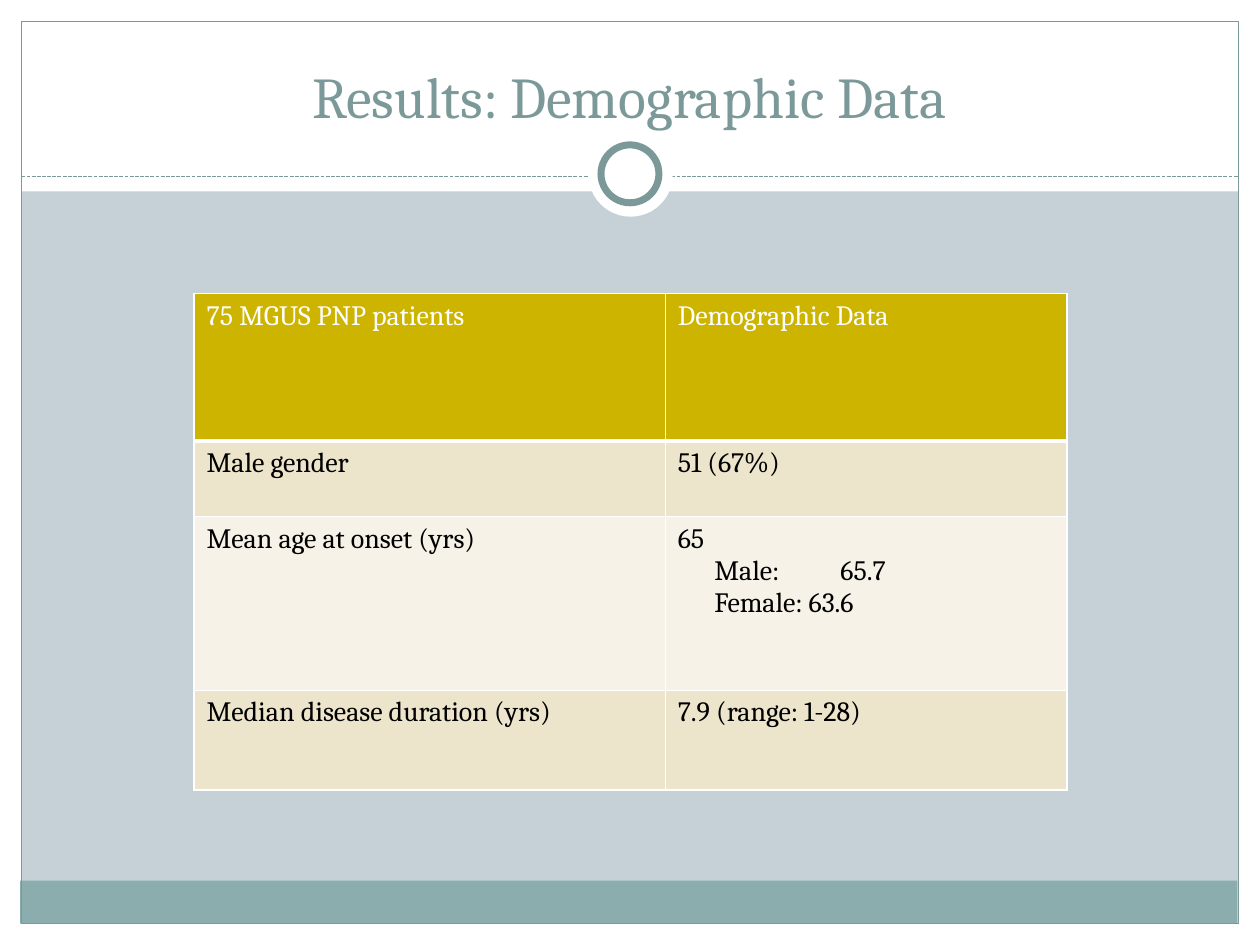
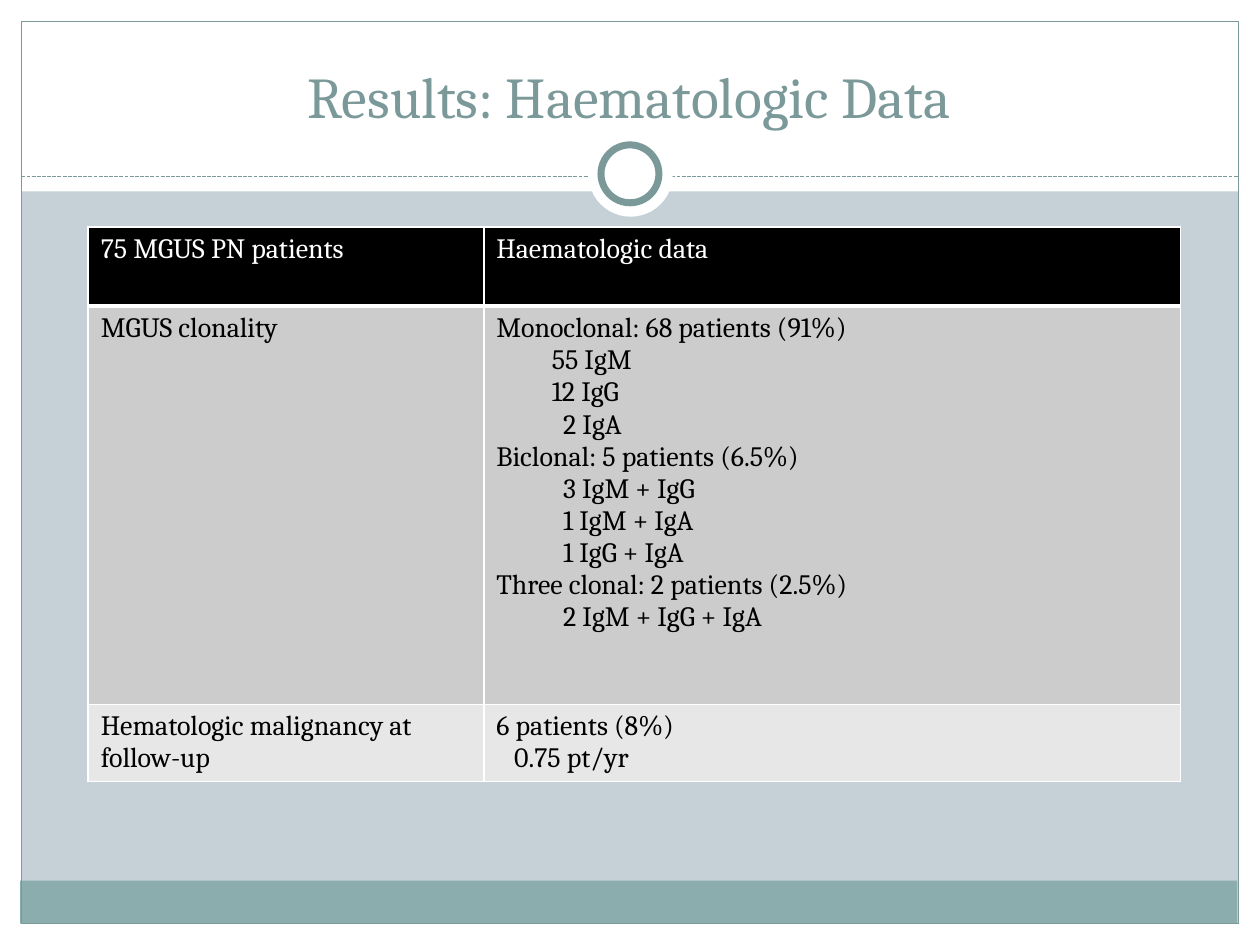
import pptx
import pptx.dml.color
import pptx.enum.dml
import pptx.enum.shapes
import pptx.enum.text
import pptx.oxml
import pptx.oxml.ns
import pptx.util
from pptx.util import Inches

FONT = "Cambria"
COLORS = {
    "background": "C5D1D7", "white": "FFFFFF", "black": "000000",
    "accent": "7C999A", "footer": "8CADAE",
    "gold": "CCB400", "sand": "ECE5CC", "cream": "F6F2E7",
    "gray": "CCCCCC", "light gray": "E7E7E7",
}

# Content: a cell is a list of lines; a line is text or (text, indent in inches)
SLIDES = [
    {
        "title": "Results: Demographic Data",
        "position": (1.54, 2.33),
        "columns": [3.74, 3.19],
        "heights": [1.17, 0.6, 1.38, 0.79],
        "fills": ("gold", "sand", "cream"),
        "rows": [
            (["75 MGUS PNP patients"], ["Demographic Data"]),
            (["Male gender"], ["51 (67%)"]),
            (["Mean age at onset (yrs)"],
             ["65", ("Male:\t65.7", 0.29), ("Female: 63.6", 0.29)]),
            (["Median disease duration (yrs)"], ["7.9 (range: 1-28)"]),
        ],
    },
    {
        "title": "Results: Haematologic Data",
        "position": (0.7, 1.8),
        "columns": [3.14, 5.53],
        "heights": [0.63, 3.16, 0.6],
        "fills": ("black", "gray", "light gray"),
        "rows": [
            (["75 MGUS PN patients"], ["Haematologic data"]),
            (["MGUS clonality"],
             ["Monoclonal: 68 patients (91%)",
              ("55 IgM", 0.44), ("12 IgG", 0.44), ("2 IgA", 0.53),
              "Biclonal: 5 patients (6.5%)",
              ("3 IgM + IgG", 0.53), ("1 IgM + IgA", 0.53), ("1 IgG + IgA", 0.53),
              "Three clonal: 2 patients (2.5%)",
              ("2 IgM + IgG + IgA", 0.53)]),
            (["Hematologic malignancy at follow-up"],
             ["6 patients (8%)", ("0.75 pt/yr", 0.14)]),
        ],
    },
]

# Frame shared by the slides: kind, box, fill, line width
MARGIN = 0.17
FRAME = [
    ("RECTANGLE", (0, 7.5 - MARGIN, 10, MARGIN), "white", 0),
    ("RECTANGLE", (0, 0, 10, 1.52), "white", 0),
    ("RECTANGLE", (0, 0, MARGIN, 7.5), "white", 0),
    ("RECTANGLE", (10 - MARGIN, 0, MARGIN, 7.5), "white", 0),
    ("RECTANGLE", (0.16, 6.99, 9.66, 0.34), "footer", 0),
    ("RECTANGLE", (MARGIN, MARGIN, 9.66, 7.16), None, 0.75),
]
RING = [
    ("OVAL", (4.67, 1.05, 0.67, 0.67), "white", 0),
    ("OVAL", (4.77, 1.15, 0.46, 0.46), "white", 4),
]
TAB_STOP = 0.76  # measured from the indent


def color(name):
    return pptx.dml.color.RGBColor.from_string(COLORS[name])


def add_shapes(slide, parts):
    for kind, box, fill, line_width in parts:
        shape_type = getattr(pptx.enum.shapes.MSO_SHAPE, kind)
        shape = slide.shapes.add_shape(shape_type, *map(Inches, box))
        shape.shadow.inherit = False
        if fill:
            shape.fill.solid()
            shape.fill.fore_color.rgb = color(fill)
        else:
            shape.fill.background()
        if line_width:
            shape.line.color.rgb = color("accent")
            shape.line.width = pptx.util.Pt(line_width)
        else:
            shape.line.fill.background()


def add_frame(slide):
    slide.background.fill.solid()
    slide.background.fill.fore_color.rgb = color("background")
    add_shapes(slide, FRAME)
    rule = slide.shapes.add_connector(
        pptx.enum.shapes.MSO_CONNECTOR.STRAIGHT,
        Inches(MARGIN), Inches(1.4), Inches(10 - MARGIN), Inches(1.4))
    rule.line.color.rgb = color("accent")
    rule.line.width = pptx.util.Pt(0.75)
    rule.line.dash_style = pptx.enum.dml.MSO_LINE.SQUARE_DOT
    rule._element.spPr.append(pptx.oxml.parse_xml(
        f"<a:effectLst {pptx.oxml.ns.nsdecls('a')}/>"))
    add_shapes(slide, RING)


def format_runs(paragraph, size, color_name):
    for run in paragraph.runs:
        run.font.name = FONT
        run.font.size = pptx.util.Pt(size)
        run.font.bold = False
        run.font.color.rgb = color(color_name)


def set_title(slide, text):
    title = slide.shapes.title
    title.left, title.top, title.width, title.height = map(
        Inches, (0.33, 0.25, 9.33, 0.83))
    frame = title.text_frame
    frame.text = text
    frame.word_wrap = True
    frame.vertical_anchor = pptx.enum.text.MSO_ANCHOR.BOTTOM
    frame.paragraphs[0].alignment = pptx.enum.text.PP_ALIGN.CENTER
    format_runs(frame.paragraphs[0], 33, "accent")
    # Bring the title in front of the white band
    slide.shapes._spTree.append(title._element)


def set_borders(cell, bottom_width):
    widths = {"lnL": 1, "lnR": 1, "lnT": 1, "lnB": bottom_width}
    properties = cell._tc.get_or_add_tcPr()
    for index, (side, width) in enumerate(widths.items()):
        properties.insert(index, pptx.oxml.parse_xml(
            f"<a:{side} {pptx.oxml.ns.nsdecls('a')} w='{pptx.util.Pt(width)}'>"
            f"<a:solidFill><a:srgbClr val='{COLORS['white']}'/></a:solidFill>"
            f"</a:{side}>"))


def fill_cell(cell, lines, text_color):
    frame = cell.text_frame
    for index, line in enumerate(lines):
        text, indent = (line, 0) if isinstance(line, str) else line
        paragraph = frame.add_paragraph() if index else frame.paragraphs[0]
        paragraph.text = text
        format_runs(paragraph, 16, text_color)
        if indent:
            properties = paragraph._p.get_or_add_pPr()
            properties.set("marL", str(Inches(indent)))
            properties.set("indent", "0")
            if "\t" in text:
                properties.append(pptx.oxml.parse_xml(
                    f"<a:tabLst {pptx.oxml.ns.nsdecls('a')}>"
                    f"<a:tab pos='{Inches(TAB_STOP)}' algn='l'/></a:tabLst>"))


def add_data_table(slide, content):
    columns, heights, rows = content["columns"], content["heights"], content["rows"]
    left, top = content["position"]
    table = slide.shapes.add_table(
        len(rows), len(columns), Inches(left), Inches(top),
        Inches(sum(columns)), Inches(sum(heights))).table
    for column, width in zip(table.columns, columns):
        column.width = Inches(width)
    header_fill, *band_fills = content["fills"]
    for row_index, row in enumerate(rows):
        table.rows[row_index].height = Inches(heights[row_index])
        is_header = row_index == 0
        fill = header_fill if is_header else band_fills[(row_index - 1) % 2]
        for column_index, lines in enumerate(row):
            cell = table.cell(row_index, column_index)
            cell.fill.solid()
            cell.fill.fore_color.rgb = color(fill)
            set_borders(cell, 3 if is_header else 1)
            fill_cell(cell, lines, "white" if is_header else "black")


def main():
    presentation = pptx.Presentation()
    presentation.slide_width = Inches(10)
    presentation.slide_height = Inches(7.5)
    for content in SLIDES:
        slide = presentation.slides.add_slide(presentation.slide_layouts[5])
        add_frame(slide)
        set_title(slide, content["title"])
        add_data_table(slide, content)
    presentation.save("out.pptx")


if __name__ == "__main__":
    main()
